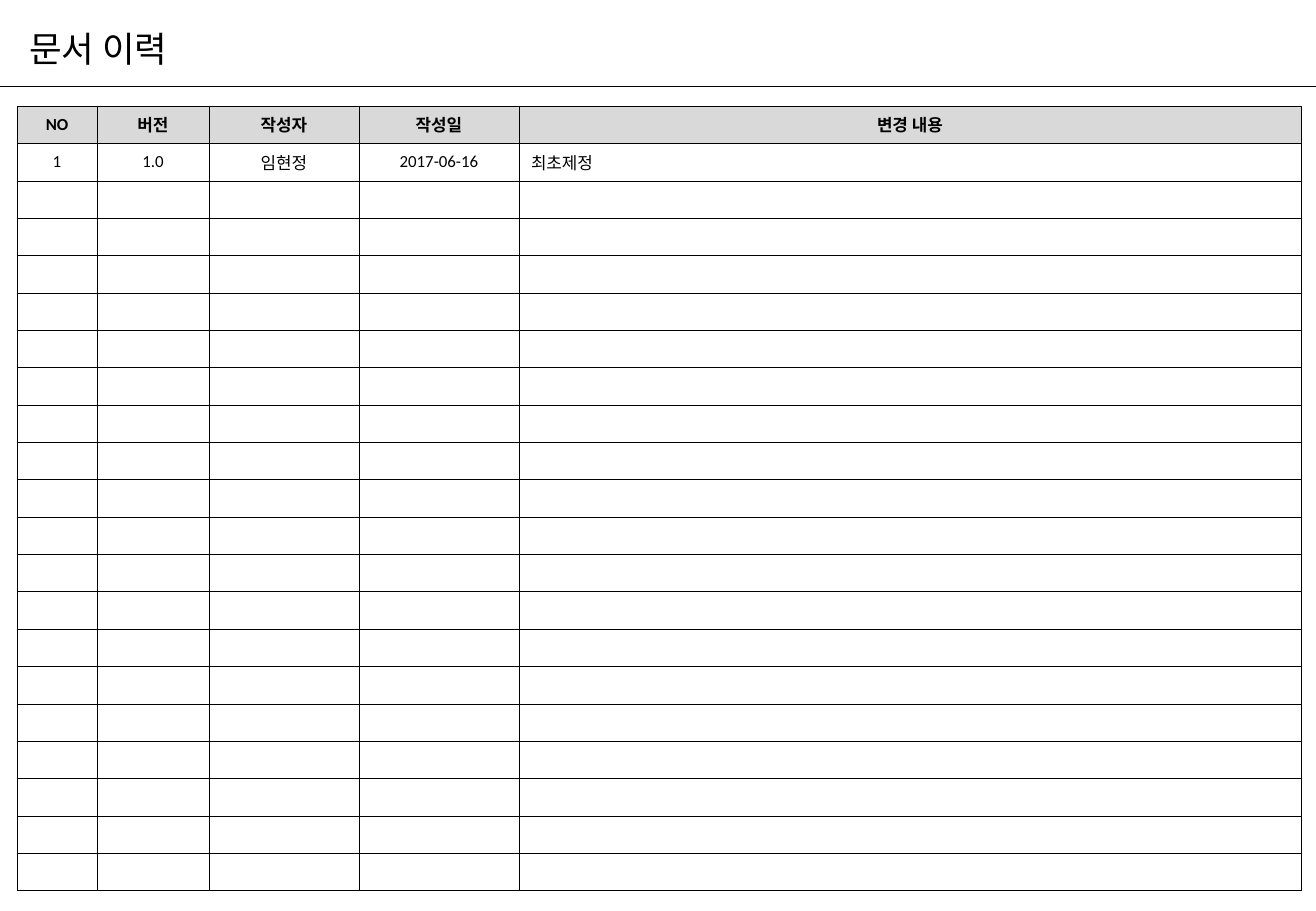
"""Build the document history slide: a title, a rule and a revision table."""
from lxml import etree
from pptx import Presentation
from pptx import util as u
from pptx.dml.color import RGBColor
from pptx.enum import shapes, text
from pptx.oxml import ns

EMU_PER_PX = 7526
FONT = "Calibri"
COLORS = {"ink": "000000", "header": "D9D9D9"}
COLUMN_WIDTHS = [80, 112, 150, 160, 782]
ROW_COUNT = 21
TABLE_HEIGHT = 785
HISTORY = [
    ["NO", "버전", "작성자", "작성일", "변경 내용"],
    ["1", "1.0", "임현정", "2017-06-16", "최초제정"],
]


def px(length):
    return u.Emu(length * EMU_PER_PX)


def color(name):
    return RGBColor.from_string(COLORS[name])


def style_paragraph(para, size, align, bold=False):
    para.alignment = align
    para.font.name = FONT
    para.font.size = u.Pt(size)
    para.font.bold = bold
    para.font.color.rgb = color("ink")


def set_title(page, wording):
    title = page.shapes.title
    title.left, title.top, title.width, title.height = px(17), px(17), px(1135), px(69)
    frame = title.text_frame
    frame.text = wording
    frame.vertical_anchor = text.MSO_ANCHOR.MIDDLE
    para = frame.paragraphs[0]
    para.line_spacing = 0.9
    style_paragraph(para, 21, text.PP_ALIGN.LEFT)


def add_rule(page, left, right, y):
    rule = page.shapes.add_connector(
        shapes.MSO_CONNECTOR.STRAIGHT, px(left), px(y), px(right), px(y))
    rule.line.color.rgb = color("ink")
    rule.line.width = u.Pt(0.5)
    etree.SubElement(rule._element.spPr, ns.qn("a:effectLst"))


def add_borders(cell):
    properties = cell._tc.get_or_add_tcPr()
    for side in ("a:lnL", "a:lnR", "a:lnT", "a:lnB"):
        border = etree.SubElement(properties, ns.qn(side), w=str(u.Pt(0.25)))
        fill = etree.SubElement(border, ns.qn("a:solidFill"))
        etree.SubElement(fill, ns.qn("a:srgbClr"), val=COLORS["ink"])


def format_cell(cell, is_header, align):
    add_borders(cell)
    if is_header:
        cell.fill.solid()
        cell.fill.fore_color.rgb = color("header")
    else:
        cell.fill.background()
    cell.margin_top = cell.margin_bottom = 0
    cell.vertical_anchor = text.MSO_ANCHOR.MIDDLE
    style_paragraph(cell.text_frame.paragraphs[0], 10, align, is_header)


def add_history_table(page):
    frame = page.shapes.add_table(
        ROW_COUNT, len(COLUMN_WIDTHS), px(17), px(106),
        px(sum(COLUMN_WIDTHS)), px(TABLE_HEIGHT))
    table = frame.table
    table.first_row = table.horz_banding = False
    for column, width in zip(table.columns, COLUMN_WIDTHS):
        column.width = px(width)
    for row_index, row in enumerate(table.rows):
        row.height = px(TABLE_HEIGHT) // ROW_COUNT
        is_header = row_index == 0
        for column_index, cell in enumerate(row.cells):
            if row_index < len(HISTORY):
                cell.text = HISTORY[row_index][column_index]
            is_note = not is_header and column_index == len(COLUMN_WIDTHS) - 1
            align = text.PP_ALIGN.LEFT if is_note else text.PP_ALIGN.CENTER
            format_cell(cell, is_header, align)


def main():
    deck = Presentation()
    deck.slide_width, deck.slide_height = px(1316), px(911)
    page = deck.slides.add_slide(deck.slide_layouts.get_by_name("Title Only"))
    set_title(page, "문서 이력")
    add_rule(page, -1, 1316, 86)
    add_history_table(page)
    deck.save("out.pptx")


if __name__ == "__main__":
    main()
